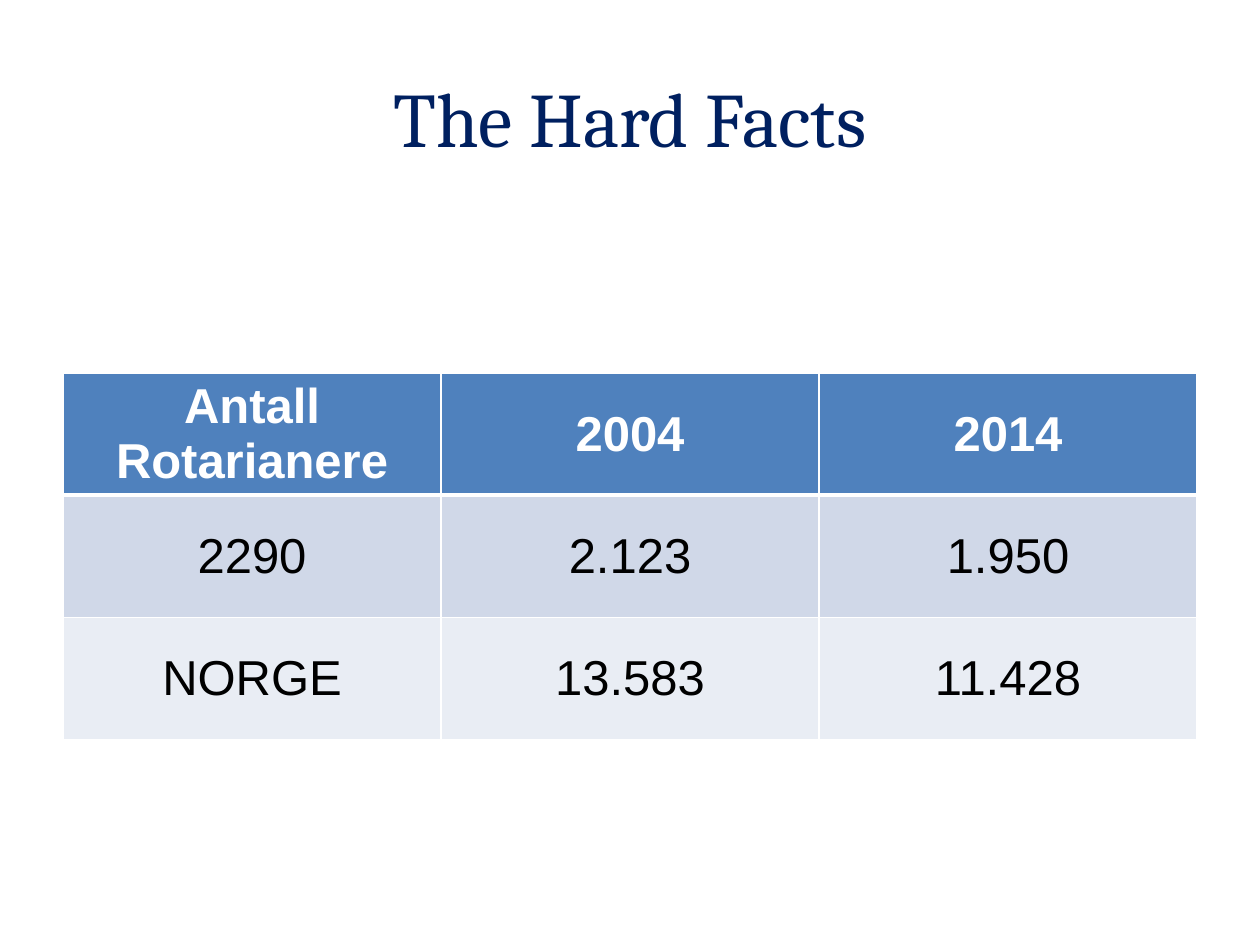
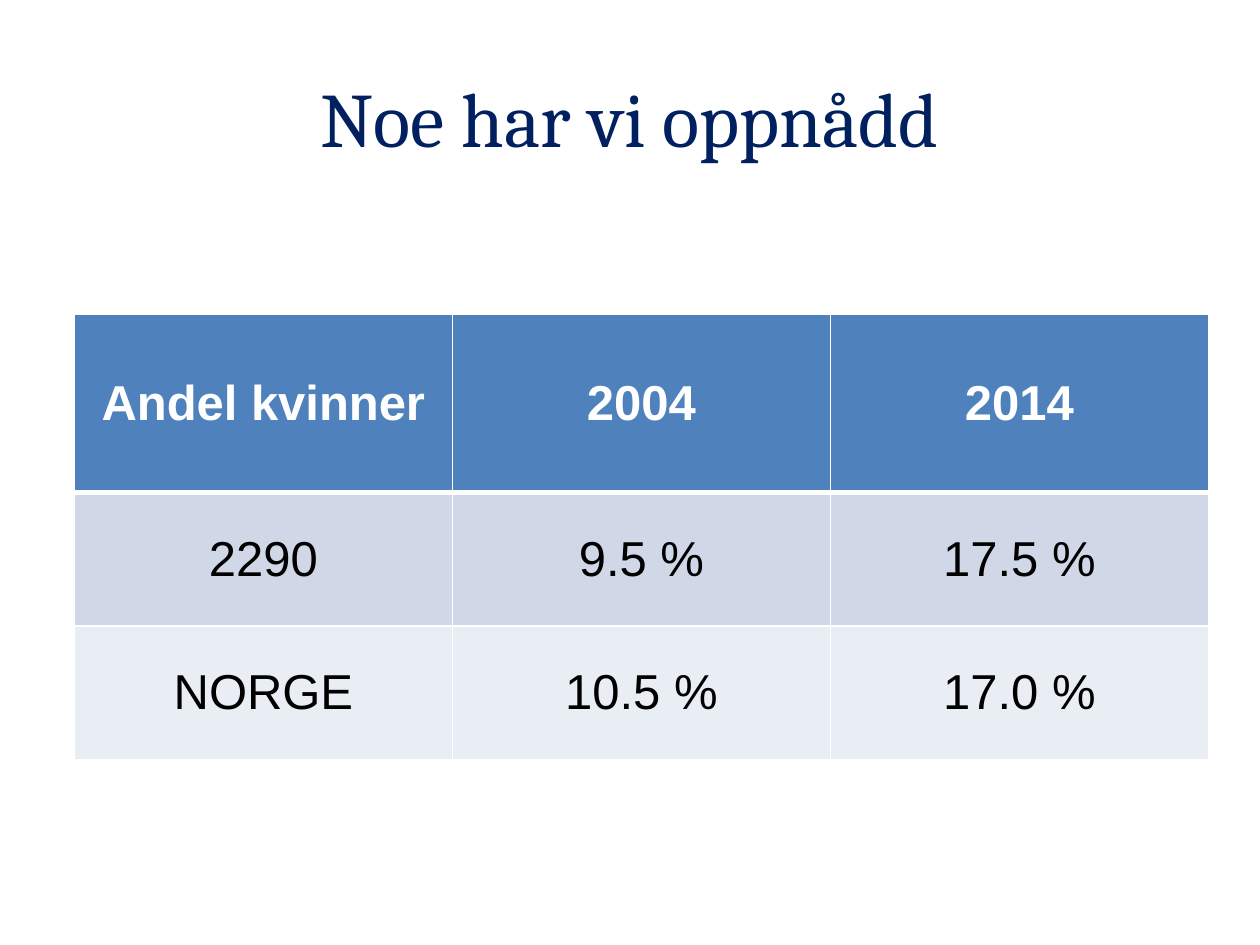
from dataclasses import dataclass

from lxml import etree
from pptx import Presentation
from pptx.dml.color import RGBColor
from pptx.enum.text import MSO_ANCHOR, PP_ALIGN
from pptx.oxml.ns import qn
from pptx.presentation import Presentation as Deck
from pptx.slide import Slide
from pptx.table import _Cell
from pptx.text.text import TextFrame
from pptx.util import Inches, Pt

CENTER = PP_ALIGN.CENTER
MIDDLE = MSO_ANCHOR.MIDDLE
TITLE_ONLY = 5


@dataclass(frozen=True)
class TextStyle:
    font: str
    size: int
    color: str
    bold: bool = False


@dataclass(frozen=True)
class Theme:
    background: str = "FFFFFF"
    title: TextStyle = TextStyle("Cambria", 44, "002060")
    header: TextStyle = TextStyle("Arial", 28, "FFFFFF", True)
    body: TextStyle = TextStyle("Arial", 28, "000000")
    header_fill: str = "4F81BD"
    band_fills: tuple[str, str] = ("D0D8E8", "E9EDF4")
    border: str = "FFFFFF"
    border_width: int = 1
    header_rule_width: int = 3


@dataclass(frozen=True)
class FactSlide:
    title: str
    left: float
    top: float
    header_height: float
    row_height: float
    rows: tuple[tuple[str, ...], ...]


THEME = Theme()
COLUMN_WIDTH = 3

FACT_SLIDES = (
    FactSlide("The Hard Facts", 0.5, 2.96, 0.97, 0.97, (
        ("Antall Rotarianere", "2004", "2014"),
        ("2290", "2.123", "1.950"),
        ("NORGE", "13.583", "11.428"),
    )),
    FactSlide("Noe har vi oppnådd", 0.59, 2.49, 1.42, 1.06, (
        ("Andel kvinner", "2004", "2014"),
        ("2290", "9.5 %", "17.5 %"),
        ("NORGE", "10.5 %", "17.0 %"),
    )),
)


def write_text(text_frame: TextFrame, text: str, style: TextStyle) -> None:
    text_frame.text = text
    paragraph = text_frame.paragraphs[0]
    paragraph.alignment = CENTER
    for run in paragraph.runs:
        run.font.name = style.font
        run.font.size = Pt(style.size)
        run.font.bold = style.bold
        run.font.color.rgb = RGBColor.from_string(style.color)


def set_borders(cell: _Cell, top: int, bottom: int) -> None:
    side = THEME.border_width
    widths = {"a:lnL": side, "a:lnR": side, "a:lnT": top, "a:lnB": bottom}
    properties = cell._tc.get_or_add_tcPr()
    for position, (tag, width) in enumerate(widths.items()):
        line = etree.Element(qn(tag), w=str(Pt(width)))
        fill = etree.SubElement(line, qn("a:solidFill"))
        etree.SubElement(fill, qn("a:srgbClr"), val=THEME.border)
        properties.insert(position, line)


def format_cell(cell: _Cell, text: str, row: int) -> None:
    is_header = row == 0
    write_text(cell.text_frame, text, THEME.header if is_header else THEME.body)
    cell.vertical_anchor = MIDDLE
    cell.fill.solid()
    fill = THEME.header_fill if is_header else THEME.band_fills[(row - 1) % 2]
    cell.fill.fore_color.rgb = RGBColor.from_string(fill)
    rule, thin = THEME.header_rule_width, THEME.border_width
    set_borders(cell, rule if row == 1 else thin, rule if is_header else thin)


def add_title(slide: Slide, text: str) -> None:
    title = slide.shapes.title
    title.left, title.top = Inches(0.5), Inches(0.3)
    title.width, title.height = Inches(9), Inches(1.25)
    title.text_frame.vertical_anchor = MIDDLE
    write_text(title.text_frame, text, THEME.title)


def add_fact_table(slide: Slide, fact: FactSlide) -> None:
    row_count, column_count = len(fact.rows), len(fact.rows[0])
    height = fact.header_height + fact.row_height * (row_count - 1)
    table = slide.shapes.add_table(
        row_count, column_count, Inches(fact.left), Inches(fact.top),
        Inches(COLUMN_WIDTH * column_count), Inches(height),
    ).table
    for row, texts in enumerate(fact.rows):
        table.rows[row].height = Inches(fact.row_height if row else fact.header_height)
        for column, text in enumerate(texts):
            format_cell(table.cell(row, column), text, row)


def add_fact_slide(presentation: Deck, fact: FactSlide) -> None:
    slide = presentation.slides.add_slide(presentation.slide_layouts[TITLE_ONLY])
    slide.background.fill.solid()
    slide.background.fill.fore_color.rgb = RGBColor.from_string(THEME.background)
    add_title(slide, fact.title)
    add_fact_table(slide, fact)


def main() -> None:
    presentation = Presentation()
    presentation.slide_width, presentation.slide_height = Inches(10), Inches(7.5)
    for fact in FACT_SLIDES:
        add_fact_slide(presentation, fact)
    presentation.save("out.pptx")


if __name__ == "__main__":
    main()
